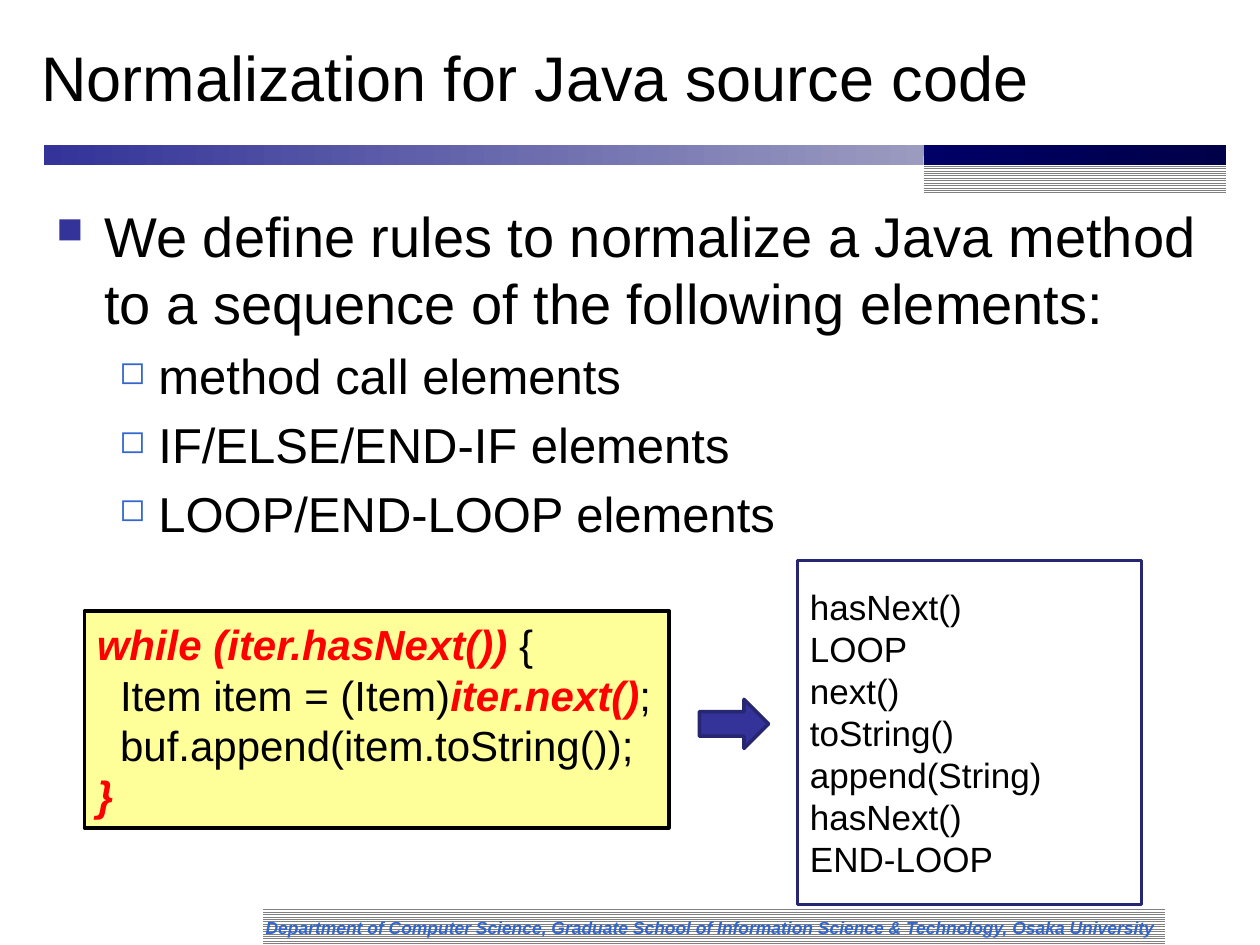
import pptx
import pptx.dml.color
import pptx.enum.dml
import pptx.enum.shapes
import pptx.enum.text
import pptx.oxml
import pptx.oxml.ns
import pptx.util

Inches = pptx.util.Inches
Pt = pptx.util.Pt
Shape = pptx.enum.shapes.MSO_SHAPE
Anchor = pptx.enum.text.MSO_ANCHOR
Fit = pptx.enum.text.MSO_AUTO_SIZE
NS = pptx.oxml.ns.nsdecls("a")
NAVY, EDGE, BLUE = "333399", "262671", "3366CC"
HOT = {"ink": "FF0000", "bold": True, "italic": True}


def color(code):
    return pptx.dml.color.RGBColor.from_string(code)


def write(para, text, size=20, ink="000000", bold=False, italic=False,
          bullet=None, tint=NAVY, left=0, hang=0, level=0, before=0):
    para.alignment = pptx.enum.text.PP_ALIGN.LEFT
    para.level = level
    if before:
        para.space_before = Pt(before)
    if bullet:
        props = para._p.get_or_add_pPr()
        props.set("marL", str(Inches(left)))
        props.set("indent", str(-Inches(hang)))
        for tag in (f'<a:buClr {NS}><a:srgbClr val="{tint}"/></a:buClr>',
                    f'<a:buSzPct {NS} val="65000"/>',
                    f'<a:buChar {NS} char="{bullet}"/>'):
            props.append(pptx.oxml.parse_xml(tag))
    run = para.add_run()
    run.text = text
    font = run.font
    font.name = "Arial"
    font.size = Pt(size)
    font.color.rgb = color(ink)
    font.bold = bold
    font.italic = italic


def lines(frame, count):
    yield frame.paragraphs[0]
    for _ in range(count - 1):
        yield frame.add_paragraph()


def add_text(slide, box, anchor=Anchor.MIDDLE):
    frame = slide.shapes.add_textbox(*map(Inches, box)).text_frame
    frame.word_wrap = True
    frame.vertical_anchor = anchor
    return frame


def add_block(slide, box, fill=None, line=None, kind=Shape.RECTANGLE):
    shape = slide.shapes.add_shape(kind, *map(Inches, box))
    shape.shadow.inherit = False
    if fill:
        shape.fill.solid()
        shape.fill.fore_color.rgb = color(fill)
    if line:
        shape.line.color.rgb = color(line)
        shape.line.width = Pt(2)
    else:
        shape.line.fill.background()
    shape.text_frame.vertical_anchor = Anchor.MIDDLE
    return shape


def add_stripes(slide, box):
    fill = add_block(slide, box).fill
    fill.patterned()
    fill.pattern = pptx.enum.dml.MSO_PATTERN.LIGHT_HORIZONTAL
    fill.fore_color.rgb = color("808080")
    fill.back_color.rgb = color("FFFFFF")


def add_fade(slide, box, *ends):
    fill = add_block(slide, box).fill
    fill.gradient()
    fill.gradient_angle = 0
    for stop, end, place in zip(fill.gradient_stops, ends, (0, 1)):
        stop.color.rgb = color(end)
        stop.position = place


def add_rule(slide, left, top, width, height):
    rest = 2.4
    split = left + width - rest
    add_fade(slide, (left, top, width - rest, height), NAVY, "9B9BC0")
    add_stripes(slide, (split, top + 0.09, rest, 0.3))
    add_fade(slide, (split, top, rest, height), "000066", "000049")


def add_footer(slide, left, top, width, height):
    add_stripes(slide, (left, top, width, height))
    frame = add_text(slide, (left - 0.08, top + 0.03, width + 0.16, height - 0.03))
    write(frame.paragraphs[0],
          "Department of Computer Science, Graduate School of Information "
          "Science & Technology, Osaka University",
          size=10, ink=BLUE, bold=True, italic=True)


def add_title(slide, *box):
    write(add_text(slide, box).paragraphs[0],
          "Normalization for Java source code", size=36)


def add_body(slide, *box):
    kinds = ("method call", "IF/ELSE/END-IF", "LOOP/END-LOOP")
    paras = lines(add_text(slide, box, Anchor.TOP), 1 + len(kinds))
    write(next(paras),
          "We define rules to normalize a Java method to a sequence "
          "of the following elements:",
          size=32, bullet="■", left=0.38, hang=0.38)
    for kind, para in zip(kinds, paras):
        write(para, f"{kind} elements", size=28, bullet="◻", tint=BLUE,
              left=0.81, hang=0.31, level=1, before=5.6)


def add_code(slide, *box):
    frame = add_block(slide, box, "FFFF99", "000000").text_frame
    frame.word_wrap = False
    frame.auto_size = Fit.SHAPE_TO_FIT_TEXT
    code = (
        (("while (iter.hasNext())", HOT), (" {", {})),
        (("  Item item = (Item)", {}), ("iter.next()", HOT), (";", {})),
        (("  buf.append(item.toString());", {}),),
        (("}", HOT),),
    )
    for parts, para in zip(code, lines(frame, len(code))):
        for text, style in parts:
            write(para, text, size=24, **style)


def add_result(slide, *box):
    frame = add_block(slide, box, "FFFFFF", EDGE).text_frame
    frame.word_wrap = True
    calls = ("hasNext()", "LOOP", "next()", "toString()",
             "append(String)", "hasNext()", "END-LOOP")
    for call, para in zip(calls, lines(frame, len(calls))):
        write(para, call)


def main():
    deck = pptx.Presentation()
    deck.slide_width, deck.slide_height = Inches(10), Inches(7.5)
    slide = deck.slides.add_slide(deck.slide_layouts[6])
    add_footer(slide, 2.09, 7.2, 7.16, 0.3)
    add_rule(slide, 0.35, 1.15, 9.38, 0.16)
    add_title(slide, 0.23, 0.13, 9.49, 0.95)
    add_code(slide, 0.67, 4.85, 4.64, 1.72)
    add_block(slide, (5.55, 5.55, 0.55, 0.39), NAVY, EDGE, Shape.RIGHT_ARROW)
    add_result(slide, 6.33, 4.45, 2.73, 2.73)
    add_body(slide, 0.35, 1.55, 9.37, 2.67)
    deck.save("out.pptx")


if __name__ == "__main__":
    main()
